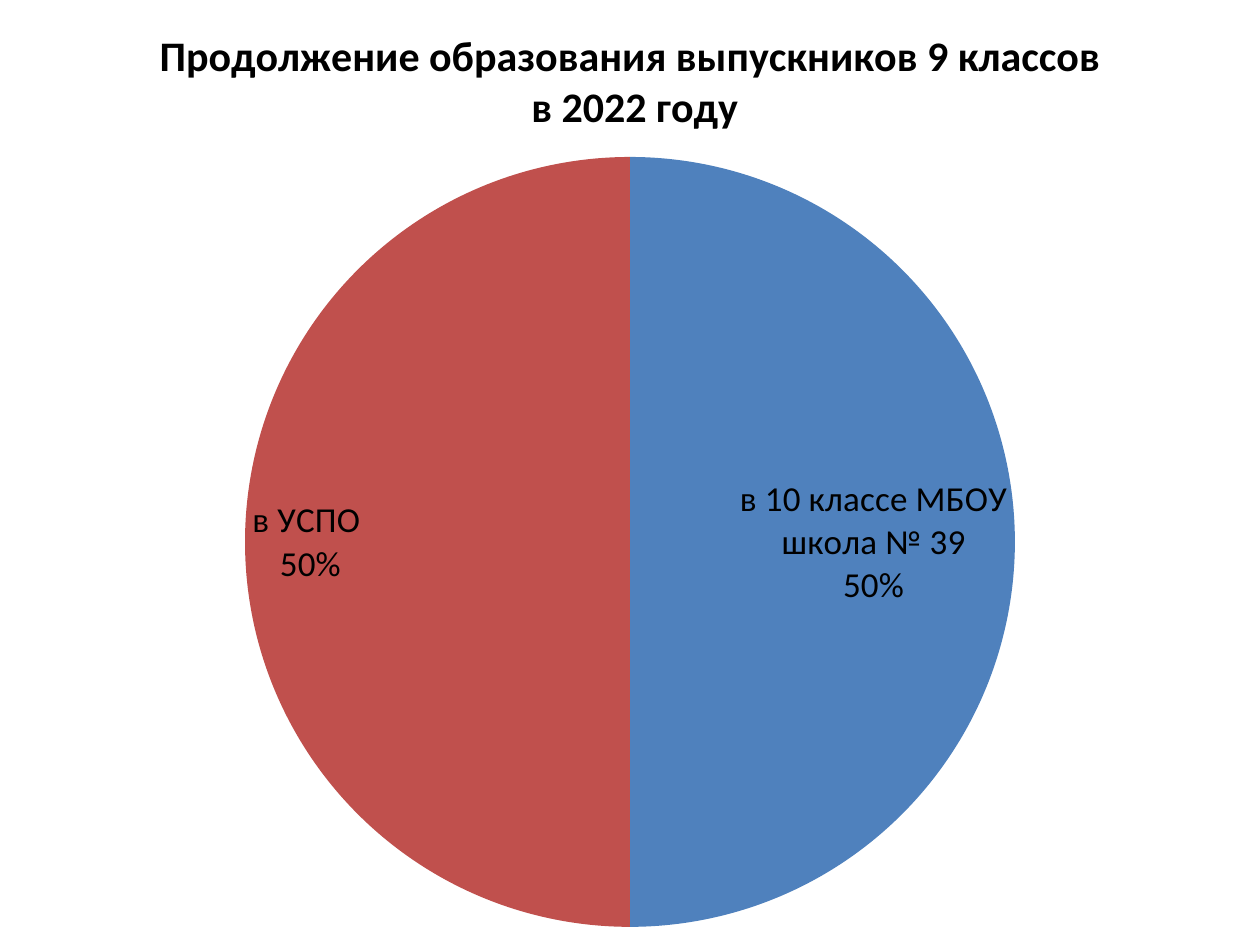
import dataclasses

import lxml.etree
import pptx
import pptx.chart.data
import pptx.dml.color
import pptx.enum.chart
import pptx.oxml.ns
import pptx.util

PX = 914400 // 126
SLIDE_WIDTH, SLIDE_HEIGHT = 1260, 945
PIE_LEFT, PIE_TOP, PIE_DIAMETER = 245, 157, 770
TITLE_LINES = ("Продолжение образования выпускников 9 классов", " в 2022 году")
DESTINATIONS = {"в 10 классе МБОУ школа № 39": 50, "в УСПО ": 50}


@dataclasses.dataclass(frozen=True)
class Theme:
    """Typeface, type sizes and colours of the slide."""

    typeface: str = "Calibri"
    title_size: int = 24
    label_size: int = 20
    text: str = "000000"
    sectors: tuple = ("4F81BD", "C0504D")


THEME = Theme()


def px(length):
    """Turn whole pixels into EMU."""
    return pptx.util.Emu(length * PX)


def rgb(code):
    """Turn a hex code into a colour."""
    return pptx.dml.color.RGBColor.from_string(code)


def style_font(font, size, bold=False):
    """Apply the theme to a font."""
    font.name = THEME.typeface
    font.size = pptx.util.Pt(size)
    font.bold = bold
    font.color.rgb = rgb(THEME.text)


def add_title(chart):
    """Write the chart title, one paragraph a line."""
    chart.has_title = True
    chart.chart_title.include_in_layout = False
    frame = chart.chart_title.text_frame
    for index, line in enumerate(TITLE_LINES):
        paragraph = frame.add_paragraph() if index else frame.paragraphs[0]
        run = paragraph.add_run()
        run.text = line
        style_font(run.font, THEME.title_size, bold=True)


def place_pie(chart):
    """Fix the inner plot area to the square around the pie."""
    qn = pptx.oxml.ns.qn
    plot_area = chart.plots[0]._element.getparent()
    for old_layout in plot_area.findall(qn("c:layout")):
        plot_area.remove(old_layout)
    layout = lxml.etree.Element(qn("c:layout"))
    plot_area.insert(0, layout)
    manual = lxml.etree.SubElement(layout, qn("c:manualLayout"))
    settings = {
        "layoutTarget": "inner",
        "xMode": "edge",
        "yMode": "edge",
        "x": PIE_LEFT / SLIDE_WIDTH,
        "y": PIE_TOP / SLIDE_HEIGHT,
        "w": PIE_DIAMETER / SLIDE_WIDTH,
        "h": PIE_DIAMETER / SLIDE_HEIGHT,
    }
    for tag, value in settings.items():
        lxml.etree.SubElement(manual, qn(f"c:{tag}")).set("val", str(value))


def label_sectors(series):
    """Show category and percentage on separate lines in each sector."""
    qn = pptx.oxml.ns.qn
    labels = series.data_labels
    labels.show_category_name = True
    labels.show_percentage = True
    labels.show_value = False
    labels.number_format = "0%"
    labels.number_format_is_linked = False
    labels.position = pptx.enum.chart.XL_LABEL_POSITION.INSIDE_END
    style_font(labels.font, THEME.label_size)
    separator = lxml.etree.Element(qn("c:separator"))
    separator.text = "\n"
    labels._element.find(qn("c:showBubbleSize")).addnext(separator)


def add_destination_pie(slide):
    """Add the full-slide pie of graduates' destinations."""
    destinations = pptx.chart.data.CategoryChartData()
    destinations.categories = list(DESTINATIONS)
    destinations.add_series("Series 1", list(DESTINATIONS.values()))
    chart = slide.shapes.add_chart(
        pptx.enum.chart.XL_CHART_TYPE.PIE,
        px(0), px(0), px(SLIDE_WIDTH), px(SLIDE_HEIGHT), destinations,
    ).chart
    style_font(chart.font, THEME.label_size)
    chart.has_legend = False
    chart.plots[0].vary_by_categories = True
    add_title(chart)
    place_pie(chart)
    series = chart.plots[0].series[0]
    for index, colour in enumerate(THEME.sectors):
        sector = series.points[index].format
        sector.fill.solid()
        sector.fill.fore_color.rgb = rgb(colour)
        sector.line.fill.background()
    label_sectors(series)


def main():
    """Build and save the slide."""
    deck = pptx.Presentation()
    deck.slide_width, deck.slide_height = px(SLIDE_WIDTH), px(SLIDE_HEIGHT)
    slide = deck.slides.add_slide(deck.slide_layouts[6])
    add_destination_pie(slide)
    deck.save("out.pptx")


if __name__ == "__main__":
    main()
